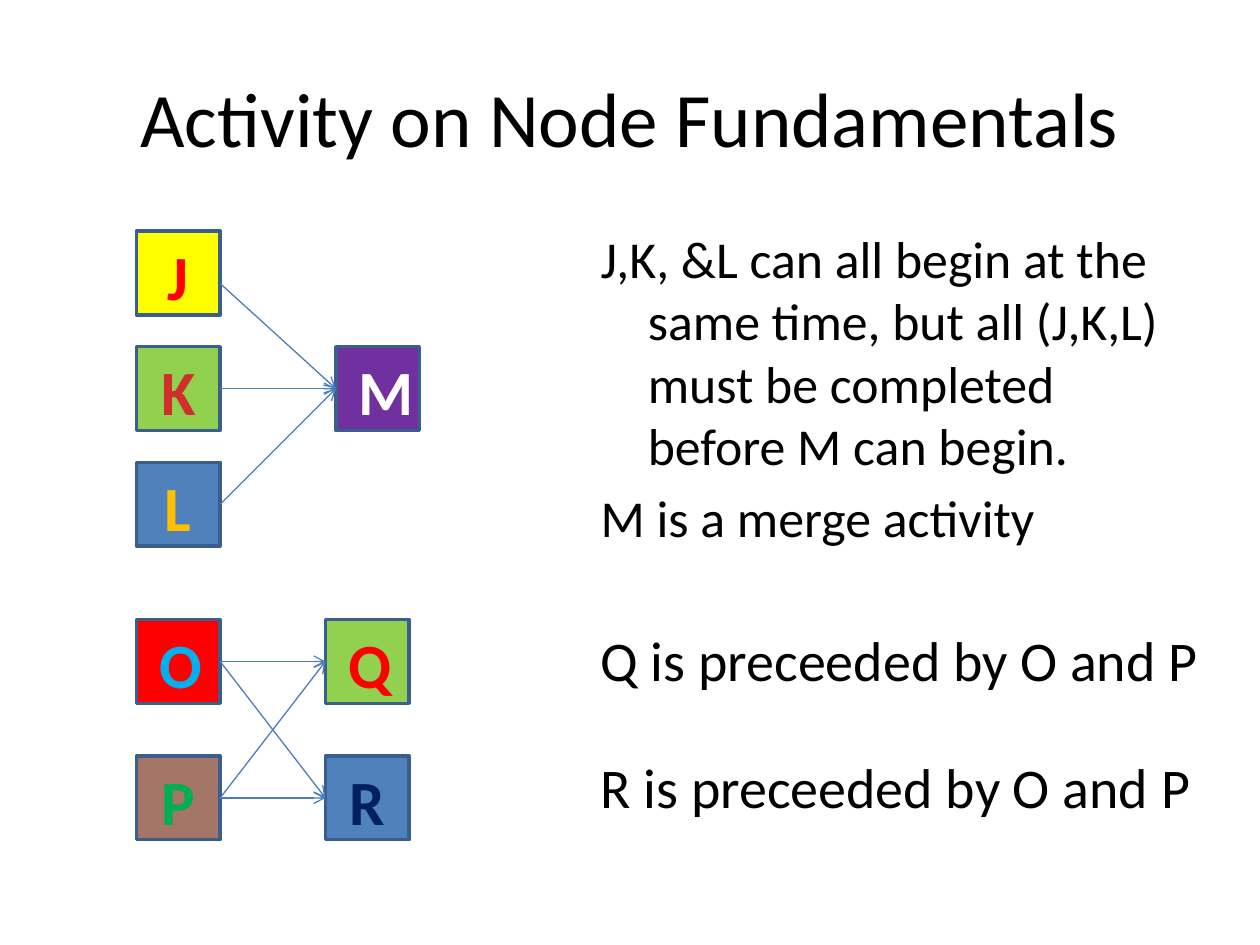
from lxml.etree import SubElement
from pptx import Presentation
from pptx.dml.color import RGBColor
from pptx.enum.shapes import MSO_CONNECTOR, MSO_SHAPE
from pptx.enum.text import MSO_ANCHOR, PP_ALIGN
from pptx.oxml.ns import qn
from pptx.util import Cm, Pt

TITLE = "Activity on Node Fundamentals"
# left, top, width, height (cm), font size, [(text, space before in pt)]
NOTES = [
    (11.86, 4.45, 12.27, 6.35, 29.6, [
        ("J,K, &L can all begin at the same time, but all (J,K,L) "
         "must be completed before M can begin.", 6),
        ("M is a merge activity", 6)]),
    (11.86, 12.49, 12.7, 5.5, 32, [
        ("Q is preceeded by O and P", 6),
        ("R is preceeded by O and P", 34)]),
]

SIDE = 1.69
LEFT, MERGE, RIGHT = 2.75, 6.77, 6.56
TOP, PITCH = 4.66, 2.33
ROW_OQ, ROW_PR = 12.49, 15.24
# name: left, top (cm), fill, letter colour
NODES = {
    "J": (LEFT, TOP, "FFFF00", "FF0000"),
    "K": (LEFT, TOP + PITCH, "92D050", "D02F2C"),
    "L": (LEFT, TOP + 2 * PITCH, "4F81BD", "FFC000"),
    "M": (MERGE, TOP + PITCH, "7030A0", "FFFFFF"),
    "O": (LEFT, ROW_OQ, "FF0000", "00B0F0"),
    "P": (LEFT, ROW_PR, "A47668", "00B050"),
    "Q": (RIGHT, ROW_OQ, "92D050", "FF0000"),
    "R": (RIGHT, ROW_PR, "4F81BD", "002060"),
}
# from, to, how far below the middle the arrow leaves (cm)
ARROWS = [("L", "M", 0), ("K", "M", 0), ("J", "M", 0.21),
          ("O", "R", 0), ("P", "Q", 0), ("O", "Q", 0), ("P", "R", 0)]


def rgb(value):
    return RGBColor.from_string(value)


def style(p, size, color="000000", bold=False):
    for r in p.runs:
        r.font.name = "Calibri"
        r.font.size = Pt(size)
        r.font.bold = bold
        r.font.color.rgb = rgb(color)


def add_text(s, left, top, width, height):
    tf = s.shapes.add_textbox(Cm(left), Cm(top), Cm(width), Cm(height)).text_frame
    tf.word_wrap = True
    return tf


def add_title(s):
    tf = add_text(s, 1.27, 0.76, 22.86, 3.18)
    tf.vertical_anchor = MSO_ANCHOR.MIDDLE
    tf.text = TITLE
    p = tf.paragraphs[0]
    p.alignment = PP_ALIGN.CENTER
    style(p, 44)


def add_note(s, left, top, width, height, size, lines):
    """Add paragraphs with a hanging indent."""
    tf = add_text(s, left, top, width, height)
    tf.text = "\n".join(text for text, _ in lines)
    for p, (_, before) in zip(tf.paragraphs, lines):
        p.space_before = Pt(before)
        pPr = p._p.get_or_add_pPr()
        pPr.set("marL", str(Cm(0.95)))
        pPr.set("indent", str(Cm(-0.95)))
        style(p, size)


def add_node(s, name, left, top, fill, color):
    sp = s.shapes.add_shape(MSO_SHAPE.RECTANGLE, Cm(left), Cm(top), Cm(SIDE), Cm(SIDE))
    sp.shadow.inherit = False
    sp.fill.solid()
    sp.fill.fore_color.rgb = rgb(fill)
    sp.line.color.rgb = rgb("3A5F8C")
    sp.line.width = Pt(2)
    tf = add_text(s, left + 0.21, top, 1.27, 1.8)
    tf.text = name
    p = tf.paragraphs[0]
    p.alignment = PP_ALIGN.CENTER
    style(p, 36, color, bold=True)


def add_arrow(s, start, end, drop):
    x1, y1 = NODES[start][:2]
    x2, y2 = NODES[end][:2]
    line = s.shapes.add_connector(
        MSO_CONNECTOR.STRAIGHT, Cm(x1 + SIDE), Cm(y1 + SIDE / 2 + drop),
        Cm(x2), Cm(y2 + SIDE / 2))
    line.line.color.rgb = rgb("4B7EBC")
    line.line.width = Pt(0.75)
    SubElement(line.line._get_or_add_ln(), qn("a:tailEnd"), type="arrow")
    SubElement(line._element.spPr, qn("a:effectLst"))


def main():
    prs = Presentation()
    prs.slide_width, prs.slide_height = Cm(25.4), Cm(19.05)
    s = prs.slides.add_slide(prs.slide_layouts[6])
    add_title(s)
    for name, node in NODES.items():
        add_node(s, name, *node)
    for arrow in ARROWS:
        add_arrow(s, *arrow)
    for note in NOTES:
        add_note(s, *note)
    prs.save("out.pptx")


if __name__ == "__main__":
    main()
